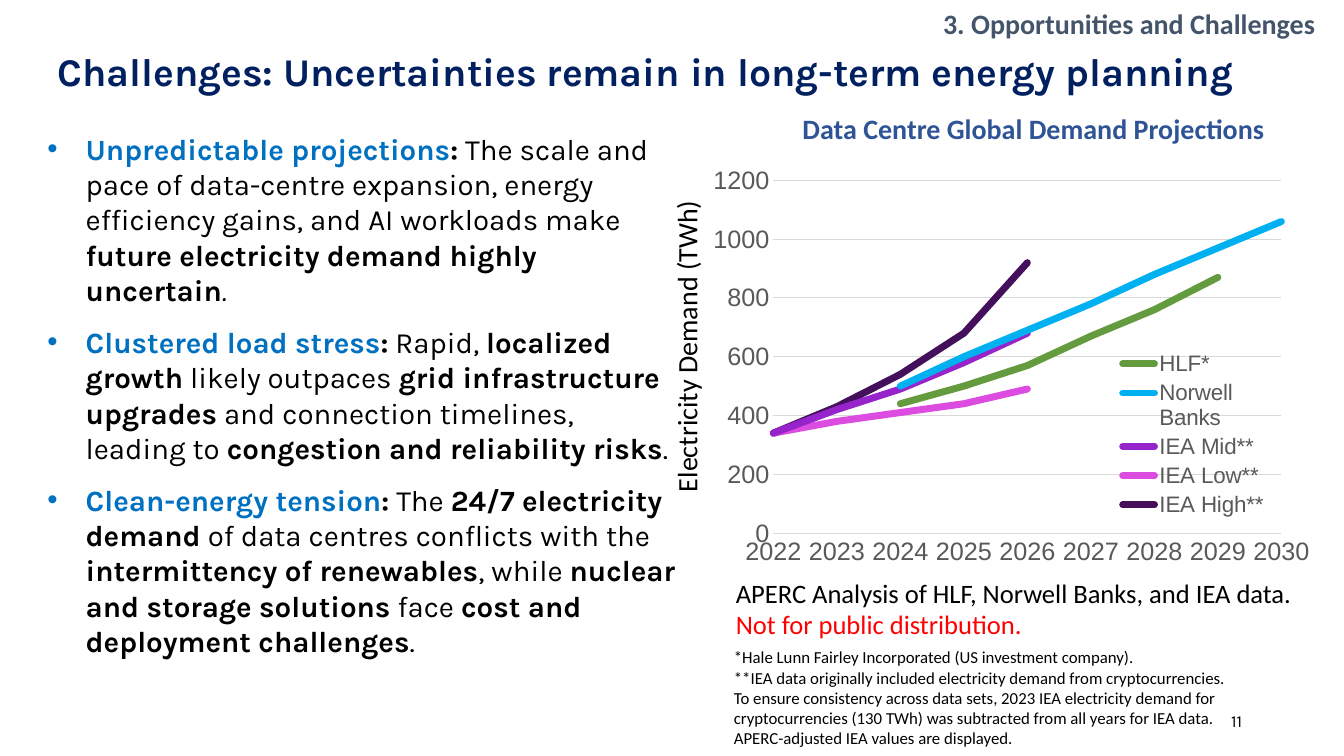
from dataclasses import dataclass

from lxml.etree import SubElement
from pptx import Presentation
from pptx.chart.data import XyChartData
from pptx.dml.color import RGBColor
from pptx.enum.chart import XL_CHART_TYPE, XL_LEGEND_POSITION, XL_TICK_MARK
from pptx.enum.text import MSO_ANCHOR, MSO_AUTO_SIZE, PP_ALIGN
from pptx.oxml import parse_xml
from pptx.oxml.ns import nsdecls, qn
from pptx.util import Inches, Pt


@dataclass(frozen=True)
class Theme:
    heading_font: str = "Karla"
    label_font: str = "Calibri"
    chart_font: str = "Arial"
    black: str = "000000"
    navy: str = "002060"
    slate: str = "44546A"
    blue: str = "2F5496"
    accent: str = "0070C0"
    warning: str = "FF0000"
    axis: str = "595959"
    grid: str = "D9D9D9"
    title: int = 28
    body: int = 21
    label: int = 20
    source: int = 19
    tick: int = 18
    legend: int = 16
    note: int = 12


T = Theme()


def write(p, text, *, size=T.label, color=T.black, font=T.label_font, bold=False, italic=False):
    r = p.add_run()
    r.text = text
    f = r.font
    f.name, f.size, f.bold, f.italic = font, Pt(size), bold, italic
    f.color.rgb = RGBColor.from_string(color)


def add_label(at, lines, align=PP_ALIGN.LEFT, anchor=MSO_ANCHOR.TOP, **style):
    """Add a wrapping text box with one paragraph per line and return it."""
    sp = s.shapes.add_textbox(*map(Inches, at))
    tf = sp.text_frame
    tf.word_wrap, tf.vertical_anchor = True, anchor
    for i, line in enumerate(lines):
        p = tf.add_paragraph() if i else tf.paragraphs[0]
        p.alignment = align
        write(p, line, **style)
    return sp


prs = Presentation()
prs.slide_width, prs.slide_height = Inches(13.33), Inches(7.5)
s = prs.slides.add_slide(prs.slide_layouts[1])

# Title and section
title, body = s.placeholders
for sp, at, anchor in (
    (title, (0.47, 0.4, 12.39, 0.59), MSO_ANCHOR.BOTTOM),
    (body, (0.37, 1.4, 6.43, 5.03), MSO_ANCHOR.MIDDLE),
):
    sp.left, sp.top, sp.width, sp.height = map(Inches, at)
    tf = sp.text_frame
    tf.word_wrap, tf.auto_size, tf.vertical_anchor = True, MSO_AUTO_SIZE.NONE, anchor

p = title.text_frame.paragraphs[0]
p.alignment, p.line_spacing = PP_ALIGN.LEFT, 0.9
write(p, "Challenges: Uncertainties remain in long-term energy planning",
      size=T.title, color=T.navy, font=T.heading_font, bold=True)
add_label((9.06, 0.02, 4.28, 0.44), ["3. Opportunities and Challenges"],
          align=PP_ALIGN.CENTER, color=T.slate, bold=True)

# Challenges: a coloured lead, then runs marked b (bold), i (italic) or plain
challenges = [
    ("Unpredictable projections", [
        (" The scale and pace of data-centre expansion, energy efficiency gains, "
         "and AI workloads make ", ""),
        ("future electricity demand highly uncertain", "b"), (".", "i")]),
    ("Clustered load stress", [
        (" Rapid, ", ""), ("localized growth", "b"), (" likely outpaces ", ""),
        ("grid infrastructure upgrades", "b"),
        (" and connection timelines, leading to ", ""),
        ("congestion and reliability risks", "b"), (".", "")]),
    ("Clean-energy tension", [
        (" The ", ""), ("24/7 electricity demand", "b"),
        (" of data centres conflicts with the ", ""),
        ("intermittency of renewables", "b"), (", while ", ""),
        ("nuclear and storage solutions", "b"), (" face ", ""),
        ("cost and deployment challenges", "b"), (".", "")]),
]
body_style = dict(size=T.body, font=T.heading_font)
tf = body.text_frame
for i, (lead, runs) in enumerate(challenges):
    p = tf.add_paragraph() if i else tf.paragraphs[0]
    pPr = p._p.get_or_add_pPr()
    pPr.set("marL", str(Inches(0.38)))
    pPr.set("indent", str(-Inches(0.38)))
    SubElement(SubElement(pPr, qn("a:buClr")), qn("a:srgbClr"), val=T.accent)
    SubElement(pPr, qn("a:buFont"), typeface=T.chart_font)
    SubElement(pPr, qn("a:buChar"), char="•")
    p.space_before = Pt(12 if i else 0)
    write(p, lead, color=T.accent, bold=True, **body_style)
    write(p, ":", bold=True, **body_style)
    for text, mark in runs:
        write(p, text, bold=mark == "b", italic=mark == "i", **body_style)

# Demand chart: values from 2022 to 2030 and colour of each projection
gap = None
projections = [
    ("HLF*", [gap, 370, 440, 500, 570, 670, 760, 870, gap], "649B3F"),
    ("Norwell Banks", [gap, 410, 500, 600, 690, 780, 880, 970, 1060], "00B0F0"),
    ("IEA Mid**", [340, 420, 490, 580, 680, gap, gap, gap, gap], "9723CB"),
    ("IEA Low**", [340, 380, 410, 440, 490, gap, gap, gap, gap], "DC4CE0"),
    ("IEA High**", [340, 430, 540, 680, 920, gap, gap, gap, gap], "44105C"),
]
data = XyChartData(number_format="General")
for name, values, _ in projections:
    series = data.add_series(name)
    for year, value in enumerate(values, 2022):
        series.add_data_point(year, value)
chart_width, chart_height = 6.16, 4.14
chart = s.shapes.add_chart(XL_CHART_TYPE.XY_SCATTER_LINES_NO_MARKERS, Inches(6.97), Inches(1.56),
                           Inches(chart_width), Inches(chart_height), data).chart
chart.has_title = False
chart.font.name, chart.font.size = T.chart_font, Pt(10)
plot = chart.plots[0]
plot.vary_by_categories = False
for series, (_, values, color) in zip(plot.series, projections):
    series.smooth = False
    line = series.format.line
    line.width = Pt(5)
    line.color.rgb = RGBColor.from_string(color)
    series._element.spPr.find(qn("a:ln")).set("cap", "rnd")
    # A year without a value has no point in the series
    points = series._element.find(qn("c:yVal")).findall(".//" + qn("c:pt"))
    for point, value in zip(points, values):
        if value is gap:
            point.getparent().remove(point)

years, demand = chart.category_axis, chart.value_axis
for axis, low, high, step in ((years, 2022, 2030, 1), (demand, 0, 1200, 200)):
    axis.minimum_scale, axis.maximum_scale, axis.major_unit = low, high, step
    axis.major_tick_mark = axis.minor_tick_mark = XL_TICK_MARK.NONE
    axis.format.line.fill.background()
    axis.tick_labels.number_format = "General"
    axis.tick_labels.number_format_is_linked = False
years.has_major_gridlines = False
demand.has_major_gridlines = True
grid = demand.major_gridlines.format.line
grid.width = Pt(0.75)
grid.color.rgb = RGBColor.from_string(T.grid)

chart.has_legend = True
legend = chart.legend
legend.position, legend.include_in_layout = XL_LEGEND_POSITION.RIGHT, True
for font, size in ((years.tick_labels.font, T.tick), (demand.tick_labels.font, T.tick),
                   (legend.font, T.legend)):
    font.name, font.size = T.chart_font, Pt(size)
    font.color.rgb = RGBColor.from_string(T.axis)

# Fixed places inside the chart, in inches from its corner
plot_area = chart._chartSpace.chart.plotArea
for parent, index, target, (x, y, w, h) in (
    (plot_area, 0, '<c:layoutTarget val="inner"/>', (0.7, 0.23, 5.04, 3.5)),
    (legend._element, 1, "", (4.09, 1.88, 1.55, 1.74)),
):
    for old in parent.findall(qn("c:layout")):
        parent.remove(old)
    parent.insert(index, parse_xml(
        f'<c:layout {nsdecls("c")}><c:manualLayout>{target}'
        '<c:xMode val="edge"/><c:yMode val="edge"/>'
        f'<c:x val="{x / chart_width}"/><c:y val="{y / chart_height}"/>'
        f'<c:w val="{w / chart_width}"/><c:h val="{h / chart_height}"/>'
        '</c:manualLayout></c:layout>'))

# Chart labels and notes
add_label((7.86, 1.06, 4.99, 0.78), ["Data Centre Global Demand Projections"],
          color=T.blue, bold=True)
add_label((5.25, 3.21, 3.11, 0.43), ["Electricity Demand (TWh)"]).rotation = 270
source = add_label((7.2, 5.67, 5.93, 0.74),
                   ["APERC Analysis of HLF, Norwell Banks, and IEA data."], size=T.source)
write(source.text_frame.add_paragraph(), "Not for public distribution.",
      size=T.source, color=T.warning)
add_label((7.18, 6.37, 5.61, 1.12), [
    "*Hale Lunn Fairley Incorporated (US investment company).",
    "**IEA data originally included electricity demand from cryptocurrencies.",
    "To ensure consistency across data sets, 2023 IEA electricity demand for "
    "cryptocurrencies (130 TWh) was subtracted from all years for IEA data.",
    "APERC-adjusted IEA values are displayed.",
], size=T.note)
add_label((9.42, 6.95, 3, 0.4), ["11"], align=PP_ALIGN.RIGHT, anchor=MSO_ANCHOR.MIDDLE,
          size=T.note, font=T.heading_font)

prs.save("out.pptx")
